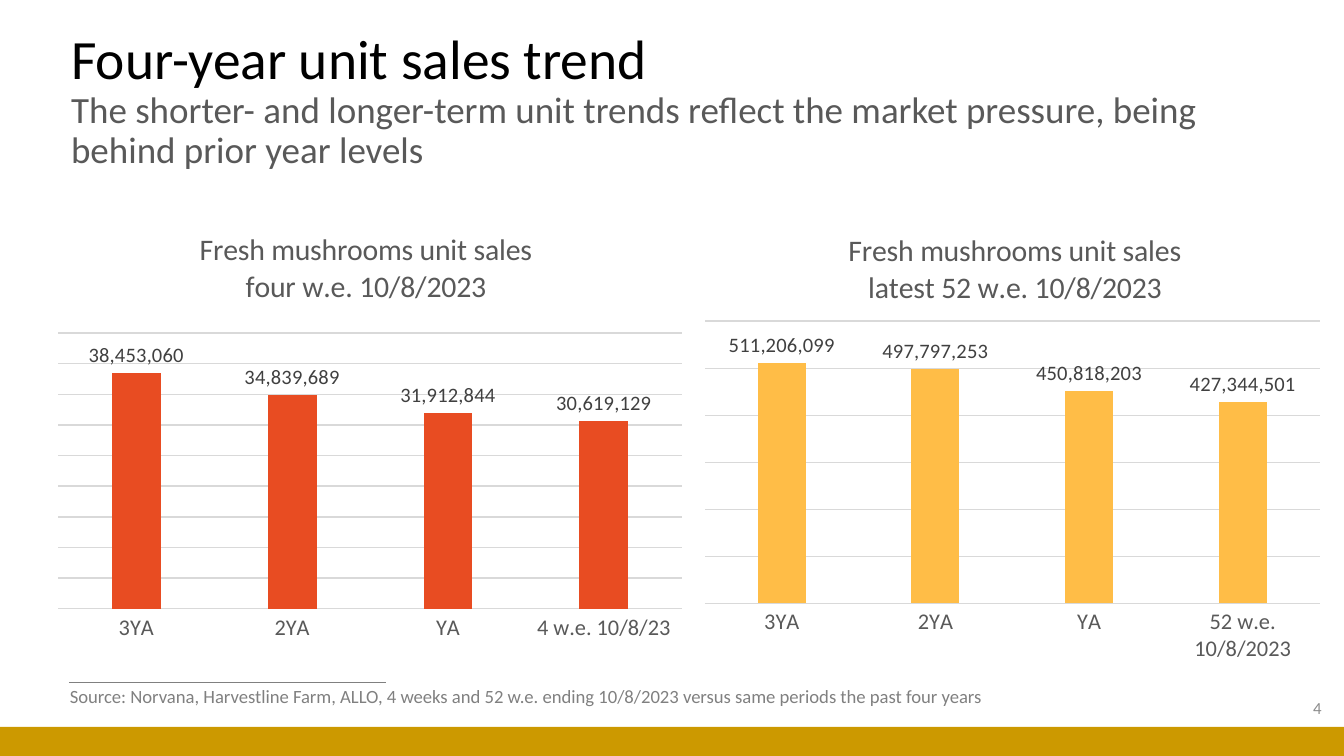
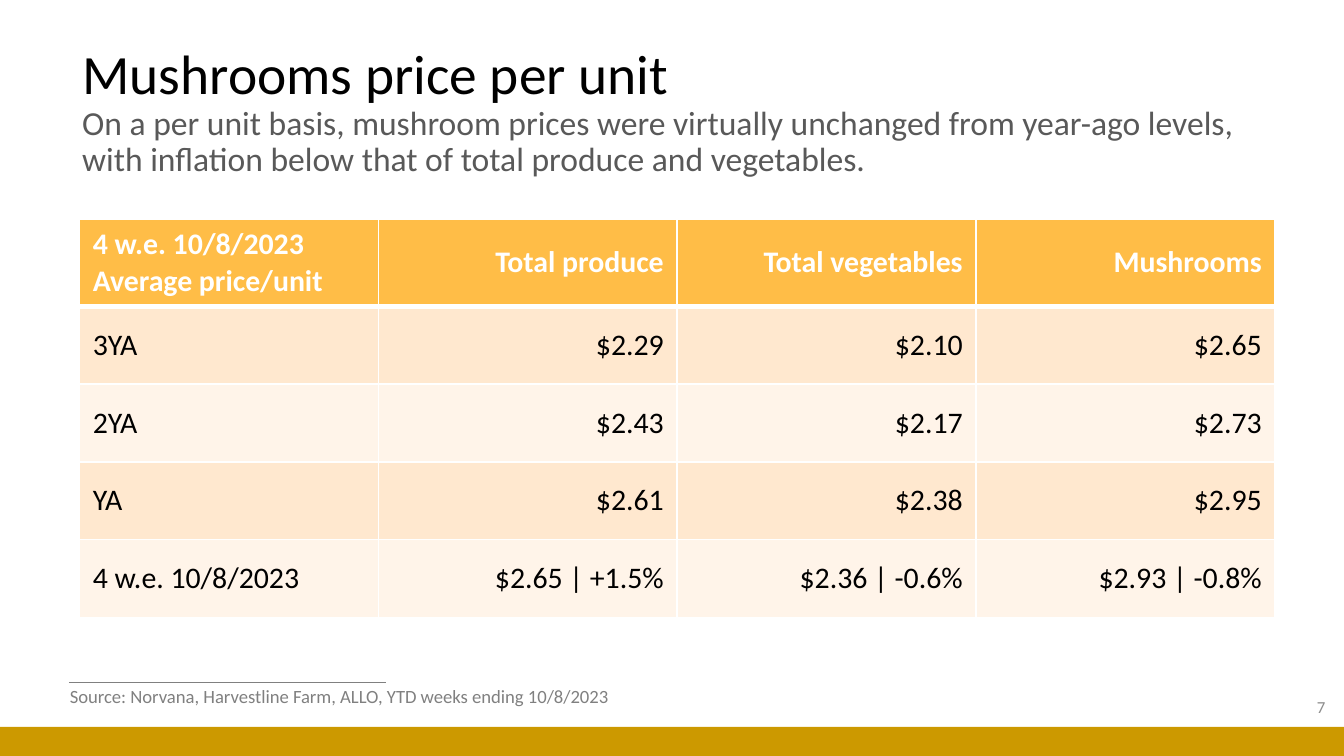
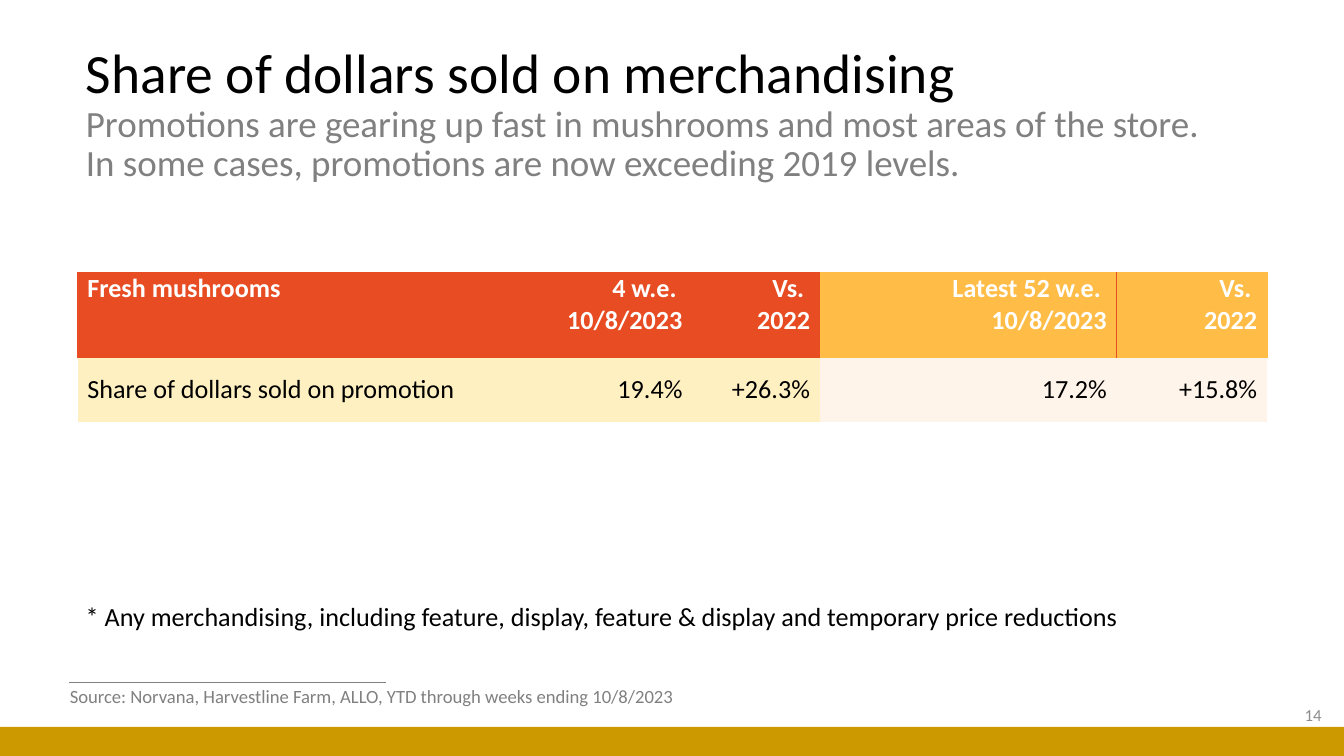
import pptx
import pptx.util
import pptx.chart.data
import pptx.dml.color
import pptx.enum.chart
import pptx.enum.shapes
import pptx.enum.text
import pptx.oxml
import pptx.oxml.ns

Cm, Pt = pptx.util.Cm, pptx.util.Pt
RGBColor = pptx.dml.color.RGBColor
PP_ALIGN = pptx.enum.text.PP_ALIGN
MSO_ANCHOR = pptx.enum.text.MSO_ANCHOR
MSO_AUTO_SIZE = pptx.enum.text.MSO_AUTO_SIZE
qn = pptx.oxml.ns.qn

# Colours
BLACK = RGBColor(0x00, 0x00, 0x00)
WHITE = RGBColor(0xFF, 0xFF, 0xFF)
DARK_GREY = RGBColor(0x59, 0x59, 0x59)
LABEL_GREY = RGBColor(0x40, 0x40, 0x40)
MID_GREY = RGBColor(0x80, 0x80, 0x80)
NUMBER_GREY = RGBColor(0x8C, 0x8C, 0x8C)
GRID_GREY = RGBColor(0xD9, 0xD9, 0xD9)
GOLD = RGBColor(0xCC, 0x99, 0x00)
RED = RGBColor(0xE8, 0x4C, 0x22)
AMBER = RGBColor(0xFF, 0xBD, 0x47)
PEACH = RGBColor(0xFF, 0xE8, 0xCF)
PALE_PEACH = RGBColor(0xFF, 0xF4, 0xE9)
PALE_YELLOW = RGBColor(0xFF, 0xF0, 0xC2)

FONT = "Calibri"
NO_TABLE_STYLE = "{2D5ABB26-0587-4C30-8999-92F81FD0307C}"


def set_font(font, size, color, bold=False):
    for name, value in {"name": FONT, "size": Pt(size), "bold": bold}.items():
        setattr(font, name, value)
    font.color.rgb = color


def box(*lengths):
    return [Cm(n) for n in lengths]


class Deck:
    """Holds the presentation, its style and the current slide."""

    def __init__(self):
        self.prs = pptx.Presentation()
        self.prs.slide_width, self.prs.slide_height = Cm(25.4), Cm(14.29)
        self.s = None

    def slide(self, title, subtitle, title_box, subtitle_size, subtitle_color,
              number, number_at, source, source_width):
        self.s = self.prs.slides.add_slide(self.prs.slide_layouts[5])
        self.rule(1.3, 12.9, 7.29)
        self.band(0, 13.74, 25.4, 0.55)
        self.title(title, subtitle, title_box, subtitle_size, subtitle_color)
        self.text(number, (*number_at, 5.72, 0.76), 9, NUMBER_GREY, wrap=True,
                  align=PP_ALIGN.RIGHT, anchor=MSO_ANCHOR.MIDDLE)
        self.text(source, (1.07, 12.83, source_width, 0.69), 10, MID_GREY)

    def rule(self, left, top, right):
        line = self.s.shapes.add_connector(
            pptx.enum.shapes.MSO_CONNECTOR.STRAIGHT, *box(left, top, right, top))
        line.line.color.rgb = MID_GREY
        line.line.width = Pt(0.5)
        line._element.spPr.append(pptx.oxml.parse_xml(
            f'<a:effectLst {pptx.oxml.ns.nsdecls("a")}/>'))

    def band(self, *lengths):
        sp = self.s.shapes.add_shape(
            pptx.enum.shapes.MSO_SHAPE.RECTANGLE, *box(*lengths))
        sp.shadow.inherit = False
        sp.fill.solid()
        sp.fill.fore_color.rgb = GOLD
        sp.line.fill.background()

    def title(self, title, subtitle, lengths, size, color):
        sp = self.s.shapes.title
        sp.left, sp.top, sp.width, sp.height = box(*lengths)
        tf = sp.text_frame
        for name, value in {"word_wrap": True, "auto_size": MSO_AUTO_SIZE.NONE,
                            "vertical_anchor": MSO_ANCHOR.MIDDLE}.items():
            setattr(tf, name, value)
        p = tf.paragraphs[0]
        p.alignment, p.line_spacing = PP_ALIGN.LEFT, 0.9
        r = p.add_run()
        r.text = title
        set_font(r.font, 29.7, BLACK)
        p.add_line_break()
        r = p.add_run()
        r.text = subtitle
        set_font(r.font, size, color)

    def text(self, text, lengths, size, color, wrap=False,
             align=PP_ALIGN.LEFT, anchor=MSO_ANCHOR.TOP):
        tf = self.s.shapes.add_textbox(*box(*lengths)).text_frame
        fit = MSO_AUTO_SIZE.NONE if wrap else MSO_AUTO_SIZE.SHAPE_TO_FIT_TEXT
        for name, value in {"word_wrap": wrap, "auto_size": fit,
                            "vertical_anchor": anchor}.items():
            setattr(tf, name, value)
        p = tf.paragraphs[0]
        p.alignment = align
        r = p.add_run()
        r.text = text
        set_font(r.font, size, color)

    def chart(self, lengths, title, cats, vals, color, axis_max, axis_step, plot):
        data = pptx.chart.data.CategoryChartData(number_format="#,##0")
        data.categories = cats
        data.add_series("Series 1", vals)
        chart = self.s.shapes.add_chart(
            pptx.enum.chart.XL_CHART_TYPE.COLUMN_CLUSTERED,
            *box(*lengths), data).chart
        set_font(chart.font, 10, BLACK)
        chart.has_legend = False

        # Title
        tf = chart.chart_title.text_frame
        tf.text = title
        for p in tf.paragraphs:
            set_font(p.runs[0].font, 16, DARK_GREY)
        self.place(chart.chart_title._element, x=0.22, y=0.04)
        chart.chart_title.include_in_layout = False

        # Axes
        axis = chart.category_axis
        axis.major_tick_mark = pptx.enum.chart.XL_TICK_MARK.NONE
        set_font(axis.tick_labels.font, 12, DARK_GREY)
        values = chart.value_axis
        for name, value in {"visible": False, "minimum_scale": 0,
                            "maximum_scale": axis_max, "major_unit": axis_step,
                            "has_major_gridlines": True}.items():
            setattr(values, name, value)
        for line in (axis.format.line, values.major_gridlines.format.line):
            line.color.rgb = GRID_GREY
            line.width = Pt(0.75)

        # Columns and labels
        columns = chart.plots[0]
        for name, value in {"gap_width": 219, "overlap": -27,
                            "vary_by_categories": False,
                            "has_data_labels": True}.items():
            setattr(columns, name, value)
        fill = columns.series[0].format.fill
        fill.solid()
        fill.fore_color.rgb = color
        labels = columns.data_labels
        for name, value in {
                "show_value": True, "number_format": "#,##0",
                "number_format_is_linked": False,
                "position": pptx.enum.chart.XL_LABEL_POSITION.OUTSIDE_END}.items():
            setattr(labels, name, value)
        set_font(labels.font, 11, LABEL_GREY)
        area = chart._chartSpace.chart.plotArea
        self.place(area, "inner", **dict(zip("xywh", plot)))

    def place(self, parent, target=None, **fractions):
        """Give a chart part a manual layout, in fractions of the chart."""
        for old in parent.findall(qn("c:layout")):
            parent.remove(old)
        parts = f'<c:layoutTarget val="{target}"/>' if target else ""
        parts += '<c:xMode val="edge"/><c:yMode val="edge"/>'
        parts += "".join(f'<c:{k} val="{v}"/>' for k, v in fractions.items())
        layout = pptx.oxml.parse_xml(
            f'<c:layout {pptx.oxml.ns.nsdecls("c")}><c:manualLayout>{parts}'
            '</c:manualLayout></c:layout>')
        tx = parent.find(qn("c:tx"))
        if tx is None:
            parent.insert(0, layout)
        else:
            tx.addnext(layout)

    def table(self, left, top, widths, heights, rows, size, style_cell):
        frame = self.s.shapes.add_table(
            len(rows), len(widths),
            *box(left, top, sum(widths), sum(heights)))
        table = frame.table
        table._tbl.tblPr.find(qn("a:tableStyleId")).text = NO_TABLE_STYLE
        for column, width in zip(table.columns, widths):
            column.width = Cm(width)
        for row, height in zip(table.rows, heights):
            row.height = Cm(height)
        for i, row in enumerate(rows):
            for j, text in enumerate(row):
                cell = table.cell(i, j)
                cell.text = text
                for p in cell.text_frame.paragraphs:
                    p.alignment = PP_ALIGN.RIGHT if j else PP_ALIGN.LEFT
                    set_font(p.runs[0].font, size, BLACK if i else WHITE, i == 0)
                cell.vertical_anchor = MSO_ANCHOR.MIDDLE
                fill, borders = style_cell(cell, i, j)
                self.borders(cell, borders)
                cell.fill.solid()
                cell.fill.fore_color.rgb = fill

    def borders(self, cell, borders):
        for side in "LRTB":
            if side in borders:
                color, width = borders[side]
                cell._tc.get_or_add_tcPr().append(pptx.oxml.parse_xml(
                    f'<a:ln{side} {pptx.oxml.ns.nsdecls("a")} w="{Pt(width)}">'
                    f'<a:solidFill><a:srgbClr val="{color}"/></a:solidFill>'
                    f'</a:ln{side}>'))


def price_cell(cell, i, j):
    borders = {side: (WHITE, 1) for side in "LRB"}
    if i == 0:
        borders.update(T=(WHITE, 1), B=(WHITE, 3))
        return AMBER, borders
    return (PEACH if i % 2 else PALE_PEACH), borders


def promotion_cell(cell, i, j):
    for name, value in {"margin_left": Cm(0.18), "margin_right": Cm(0.18),
                        "margin_top": 0, "margin_bottom": 0}.items():
        setattr(cell, name, value)
    recent = j < 3
    if i:
        return (PALE_YELLOW if recent else PALE_PEACH), {}
    cell.vertical_anchor = MSO_ANCHOR.TOP
    if recent:
        return RED, {side: (RED, 1) for side in "LRT"}
    return AMBER, {"T": (AMBER, 1), "R": (RED if j == 3 else AMBER, 1)}


def main():
    deck = Deck()

    # Unit sales
    deck.slide("Four-year unit sales trend",
               "The shorter- and longer-term unit trends reflect the market "
               "pressure, being behind prior year levels",
               (1.09, 0.91, 23.01, 2.01), 19.8, DARK_GREY, "4", (19.51, 13),
               "Source: Norvana, Harvestline Farm, ALLO, 4 weeks and 52 w.e. "
               "ending 10/8/2023 versus same periods the past four years", 18.03)
    years = ["3YA", "2YA", "YA"]
    deck.chart((1.09, 3.94, 11.81, 8.41),
               "Fresh mushrooms unit sales\nfour w.e. 10/8/2023",
               years + ["4 w.e. 10/8/23"],
               (38453060, 34839689, 31912844, 30619129),
               RED, 45000000, 5000000, (0, 0.28, 1, 0.62))
    deck.chart((13.31, 3.94, 11.99, 8.89),
               "Fresh mushrooms unit sales\nlatest 52 w.e. 10/8/2023",
               years + ["52 w.e. 10/8/2023"],
               (511206099, 497797253, 450818203, 427344501),
               AMBER, 600000000, 100000000, (0, 0.24, 0.97, 0.6))

    # Price per unit
    deck.slide("Mushrooms price per unit",
               "On a per unit basis, mushroom prices were virtually unchanged "
               "from year-ago levels, with inflation below that of total "
               "produce and vegetables.",
               (1.3, 1.45, 23.01, 1.37), 18, DARK_GREY, "7", (19.58, 12.98),
               "Source: Norvana, Harvestline Farm, ALLO, YTD weeks ending "
               "10/8/2023", 10.95)
    deck.table(1.5, 4.14, [5.65] * 4, [1.65] + [1.47] * 4, [
        ["4 w.e. 10/8/2023\nAverage price/unit", "Total produce",
         "Total vegetables", "Mushrooms"],
        ["3YA", "$2.29", "$2.10", "$2.65"],
        ["2YA", "$2.43", "$2.17", "$2.73"],
        ["YA", "$2.61", "$2.38", "$2.95"],
        ["4 w.e. 10/8/2023", "$2.65 | +1.5%", "$2.36 | -0.6%", "$2.93 | -0.8%"],
    ], 16, price_cell)

    # Merchandising
    deck.slide("Share of dollars sold on merchandising",
               "Promotions are gearing up fast in mushrooms and most areas of "
               "the store. In some cases, promotions are now exceeding 2019 "
               "levels.",
               (1.37, 0.79, 21.72, 2.77), 19.8, MID_GREY, "14", (19.51, 13.13),
               "Source: Norvana, Harvestline Farm, ALLO, YTD through weeks "
               "ending 10/8/2023", 12.22)
    deck.text("* Any merchandising, including feature, display, feature & "
              "display and temporary price reductions",
              (1.37, 11.23, 20.57, 0.86), 14, BLACK)
    deck.table(1.47, 5.16, [7.62, 3.99, 2.41, 5.61, 2.84], [1.6, 1.22], [
        ["Fresh mushrooms", "4 w.e. \n10/8/2023", "Vs. \n2022",
         "Latest 52 w.e. \n10/8/2023", "Vs. \n2022"],
        ["Share of dollars sold on promotion", "19.4%", "+26.3%", "17.2%",
         "+15.8%"],
    ], 14, promotion_cell)

    deck.prs.save("out.pptx")


if __name__ == "__main__":
    main()
